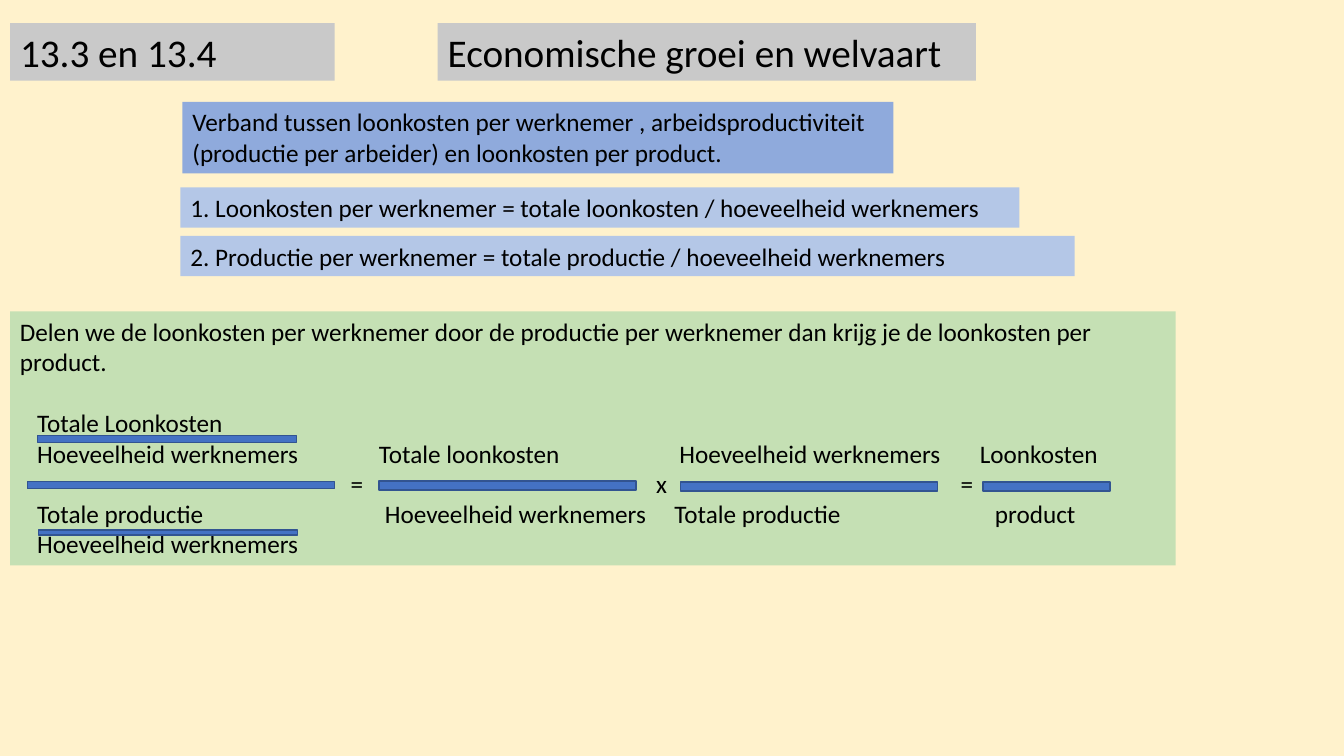
from lxml import etree
from pptx import Presentation
from pptx.dml.color import RGBColor
from pptx.enum.shapes import MSO_SHAPE
from pptx.enum.text import MSO_ANCHOR, MSO_AUTO_SIZE, PP_ALIGN
from pptx.oxml.ns import qn
from pptx.util import Inches, Pt

RECT = MSO_SHAPE.RECTANGLE
TOP = MSO_ANCHOR.TOP
LEFT = PP_ALIGN.LEFT
NOFIT = MSO_AUTO_SIZE.NONE

HUES = {
    "page": "FFF2CC", "gray": "C9C9C9", "blue": "8FAADC", "pale": "B4C7E7",
    "green": "C5E0B4", "bar": "4472C4", "edge": "325491", "ink": "000000",
}


def tint(name):
    return RGBColor.from_string(HUES[name])


def write(text, box, area, fill, size=18):
    box.left, box.top, box.width, box.height = [Inches(n) for n in area]
    box.fill.solid()
    box.fill.fore_color.rgb = tint(fill)
    frame = box.text_frame
    frame.word_wrap = True
    frame.auto_size = NOFIT
    frame.vertical_anchor = TOP
    frame.text = text
    for para in frame.paragraphs:
        para.alignment = LEFT
        for run in para.runs:
            run.font.size = Pt(size)
            run.font.name = "Calibri"
            run.font.color.rgb = tint("ink")
    return frame


deck = Presentation()
deck.slide_width = Inches(13.33)
deck.slide_height = Inches(7.5)
slide = deck.slides.add_slide(deck.slide_layouts[5])
slide.background.fill.solid()
slide.background.fill.fore_color.rgb = tint("page")
shapes = slide.shapes

write("Economische groei en welvaart", shapes.title,
      (4.34, 0.23, 5.34, 0.57), "gray", size=28)

terms = [
    (["Totale Loonkosten"], [0.17]),
    (["Hoeveelheid werknemers", "Totale loonkosten",
      "Hoeveelheid werknemers", "Loonkosten"], [0.17, 3.56, 6.54, 9.52]),
    (["=", "x", "="], [3.28, 6.31, 9.33]),
    (["Totale productie", "Hoeveelheid werknemers",
      "Totale productie", "product"], [0.17, 3.62, 6.49, 9.67]),
    (["Hoeveelheid werknemers"], [0.17]),
]
intro = ("Delen we de loonkosten per werknemer door de productie per werknemer "
         "dan krijg je de loonkosten per product.")
lines = [intro] + ["\t" + "\t".join(words) for words, stops in terms]

panels = [
    ("13.3 en 13.4", (0.1, 0.23, 3.22, 0.57), "gray", 28),
    ("Verband tussen loonkosten per werknemer , arbeidsproductiviteit "
     "(productie per arbeider) en loonkosten per product.",
     (1.81, 1.01, 7.05, 0.71), "blue", 18),
    ("1. Loonkosten per werknemer = totale loonkosten / hoeveelheid werknemers",
     (1.79, 1.86, 8.32, 0.4), "pale", 18),
    ("2. Productie per werknemer = totale productie / hoeveelheid werknemers",
     (1.79, 2.34, 8.87, 0.4), "pale", 18),
    ("\n".join(lines), (0.1, 3.09, 11.56, 2.52), "green", 18),
]
for text, area, fill, size in panels:
    box = shapes.add_textbox(0, 0, 0, 0)
    frame = write(text, box, area, fill, size=size)

paras = frame.paragraphs[1:]
paras[0].space_before = Pt(22)
for para, (words, stops) in zip(paras, terms):
    tabs = etree.SubElement(para._p.get_or_add_pPr(), qn("a:tabLst"))
    for stop in stops:
        etree.SubElement(tabs, qn("a:tab"), pos=str(Inches(stop)), algn="l")

bars = [
    (0.27, 4.78, 3.05, 0.07), (3.76, 4.77, 2.55, 0.09),
    (6.75, 4.78, 2.55, 0.09), (9.75, 4.78, 1.26, 0.09),
    (0.38, 5.26, 2.57, 0.05), (0.37, 4.32, 2.57, 0.07),
]
for area in bars:
    bar = shapes.add_shape(RECT, *[Inches(n) for n in area])
    bar.shadow.inherit = False
    bar.fill.solid()
    bar.fill.fore_color.rgb = tint("bar")
    bar.line.color.rgb = tint("edge")
    bar.line.width = Pt(1)

deck.save("out.pptx")
